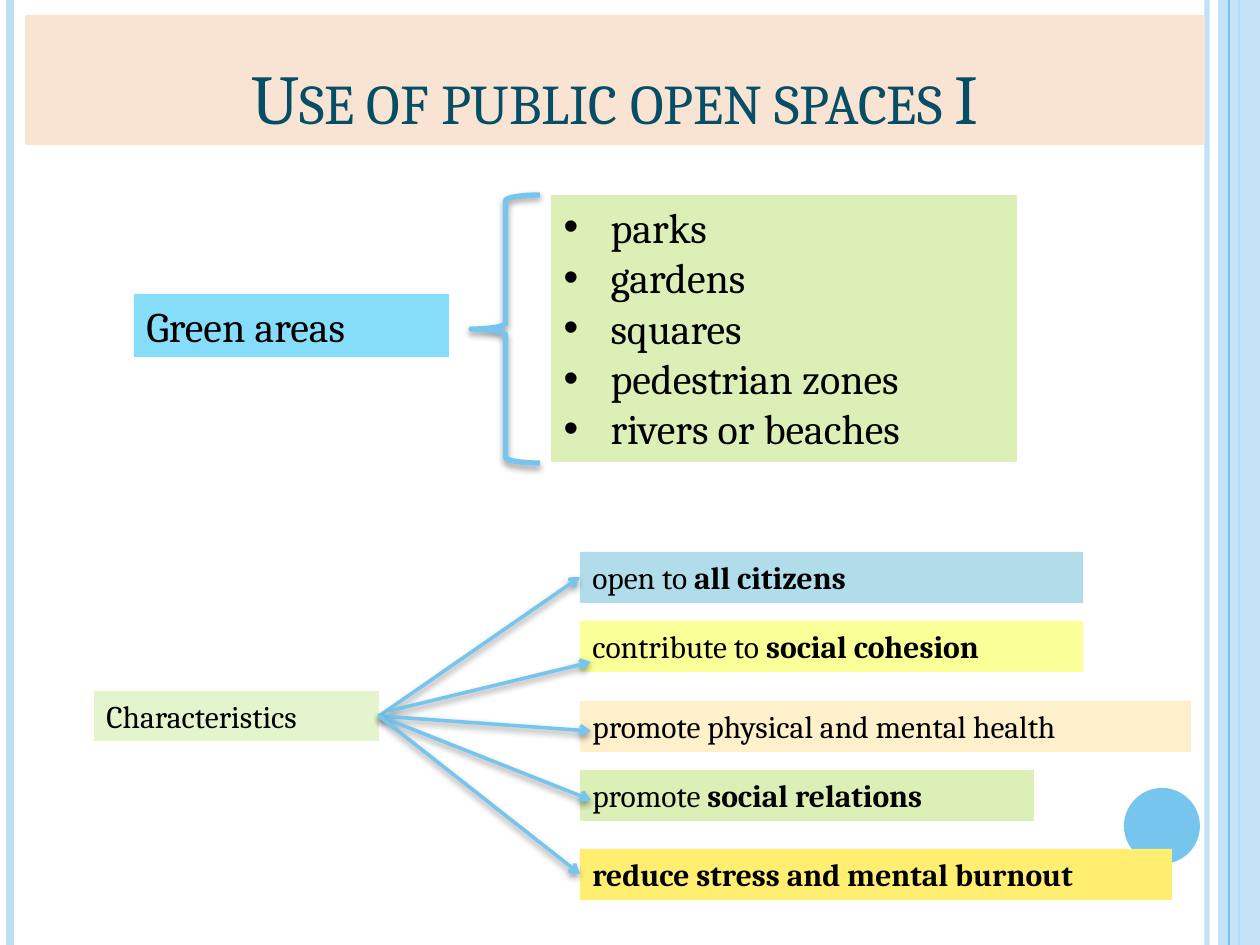
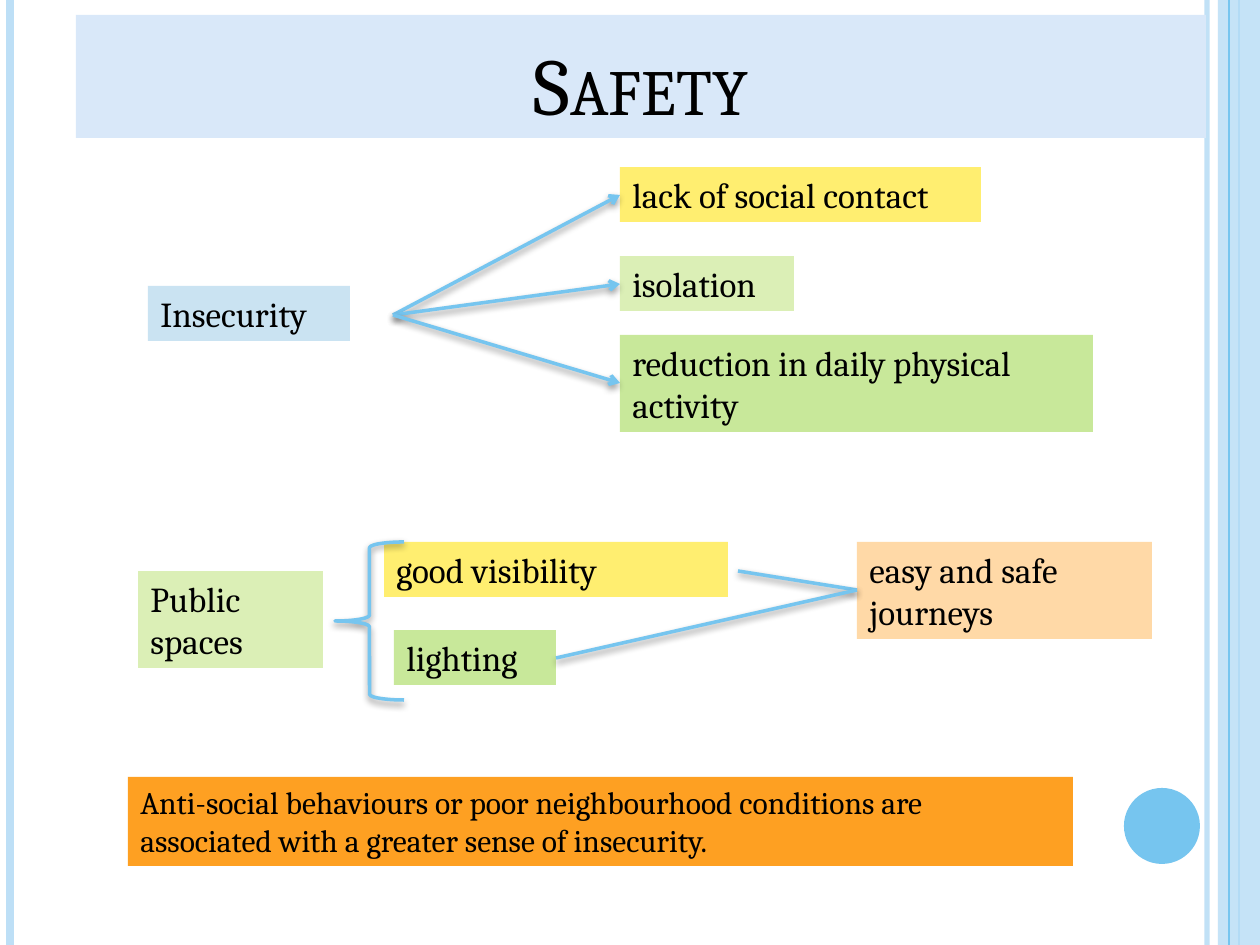
from dataclasses import dataclass

from lxml.etree import SubElement
from pptx import Presentation
from pptx.dml.color import RGBColor
from pptx.enum.shapes import MSO_CONNECTOR, MSO_SHAPE
from pptx.enum.text import MSO_ANCHOR, MSO_AUTO_SIZE, PP_ALIGN
from pptx.oxml.ns import qn
from pptx.util import Emu, Pt

PX_PER_INCH = 126
WIDTH, HEIGHT = 1260, 945
FONT = "Cambria"
BLACK, SKY, PALE_SKY = "000000", "76C5EF", "BDDFF6"
LIME, GREEN, YELLOW = "DBEFB6", "C8E89A", "FFEE70"


@dataclass
class Box:
    text: str
    x: int
    y: int
    w: int
    h: int
    fill: str
    size: int = 20


@dataclass
class Line:
    x1: int
    y1: int
    x2: int
    y2: int
    width: float = 2
    color: str = SKY


def px(n: float) -> Emu:
    return Emu(round(n * 914400 / PX_PER_INCH))


def rgb(color: str) -> RGBColor:
    return RGBColor.from_string(color)


def place(s, x: int, y: int, w: int, h: int) -> None:
    s.left, s.top, s.width, s.height = px(x), px(y), px(w), px(h)


def paint(s, color: str) -> None:
    s.fill.solid()
    s.fill.fore_color.rgb = rgb(color)


def write(tf, text: str, *, size: int, color: str = BLACK, align=PP_ALIGN.LEFT,
          anchor=MSO_ANCHOR.TOP, small_caps: bool = False, indent: int = 0) -> None:
    """Fill a frame: one paragraph per line, with bold between ** marks."""
    tf.word_wrap = True
    tf.auto_size = MSO_AUTO_SIZE.NONE
    tf.vertical_anchor = anchor
    for i, row in enumerate(text.split("\n")):
        p = tf.add_paragraph() if i else tf.paragraphs[0]
        p.alignment = align
        p.space_before = Pt(0)
        if indent:
            pPr = p._p.get_or_add_pPr()
            pPr.set("marL", str(px(indent)))
            pPr.set("indent", str(-px(indent)))
        for j, part in enumerate(row.split("**")):
            if not part:
                continue
            r = p.add_run()
            r.text = part
            r.font.name, r.font.size = FONT, Pt(size)
            r.font.bold = j % 2 == 1
            r.font.color.rgb = rgb(color)
            if small_caps:
                r.font._element.set("cap", "small")


def add_shadow(s) -> None:
    effects = SubElement(s.element.spPr, qn("a:effectLst"))
    shadow = SubElement(effects, qn("a:outerShdw"), blurRad=str(Pt(4)), dist=str(Pt(2)),
                        dir="5400000", rotWithShape="0")
    color = SubElement(shadow, qn("a:srgbClr"), val=BLACK)
    SubElement(color, qn("a:alpha"), val="40000")


def set_opacity(s, percent: int) -> None:
    color = s.element.spPr.find(".//" + qn("a:srgbClr"))
    SubElement(color, qn("a:alpha"), val=str(percent * 1000))


def add_line(slide, line: Line, *, shadow: bool = True, arrow: bool = False):
    s = slide.shapes.add_connector(MSO_CONNECTOR.STRAIGHT, px(line.x1), px(line.y1),
                                   px(line.x2), px(line.y2))
    s.line.color.rgb = rgb(line.color)
    s.line.width = Pt(line.width)
    if arrow:
        SubElement(s.line._get_or_add_ln(), qn("a:tailEnd"), type="arrow")
    if shadow:
        add_shadow(s)
    else:
        SubElement(s.element.spPr, qn("a:effectLst"))
    return s


def add_plain_shape(slide, kind: MSO_SHAPE, x: int, y: int, w: int, h: int, color: str):
    s = slide.shapes.add_shape(kind, px(x), px(y), px(w), px(h))
    s.shadow.inherit = False
    paint(s, color)
    s.line.fill.background()
    return s


def add_box(slide, box: Box) -> None:
    s = slide.shapes.add_textbox(px(box.x), px(box.y), px(box.w), px(box.h))
    paint(s, box.fill)
    write(s.text_frame, box.text, size=box.size)


def add_brace(slide, x: int, y: int, w: int, h: int, width: float) -> None:
    s = slide.shapes.add_shape(MSO_SHAPE.LEFT_BRACE, px(x), px(y), px(w), px(h))
    s.fill.background()
    s.line.color.rgb = rgb(SKY)
    s.line.width = Pt(width)
    add_shadow(s)


def set_title(slide, band: Box, color: str) -> None:
    s = slide.shapes.title
    place(s, band.x, band.y, band.w, band.h)
    paint(s, band.fill)
    write(s.text_frame, band.text, size=band.size, color=color, align=PP_ALIGN.CENTER,
          anchor=MSO_ANCHOR.BOTTOM, small_caps=True)


def decorate_master(prs, slide) -> None:
    """Draw the edge bands and the dot on a slide, then move them to the master."""
    def edge(x: int, width: float, color: str):
        return add_line(slide, Line(x, 0, x, HEIGHT, width, color), shadow=False)

    right = edge(1207, 3, PALE_SKY)
    set_opacity(right, 93)
    left = edge(10, 4.5, PALE_SKY)
    outer = edge(1239, 1.5, SKY)
    band = add_plain_shape(slide, MSO_SHAPE.RECTANGLE, 1218, 0, 42, HEIGHT, PALE_SKY)
    set_opacity(band, 87)
    inner = edge(1229, 0.75, SKY)
    dot = add_plain_shape(slide, MSO_SHAPE.OVAL, 1124, 788, 76, 76, SKY)
    for i, s in enumerate((right, left, outer, band, inner, dot), 100):
        s.element.xpath(".//p:cNvPr")[0].set("id", str(i))
        prs.slide_master.shapes.element.append(s.element)


def build_open_spaces(slide) -> None:
    set_title(slide, Box("Use of public open spaces I", 25, 15, 1180, 130, "F9E3D2", 40),
              "054E65")

    add_box(slide, Box("Green areas", 134, 294, 315, 63, "86DDF9", 24))
    places = slide.placeholders[1]
    place(places, 551, 195, 466, 267)
    paint(places, LIME)
    write(places.text_frame, "parks\ngardens\nsquares\npedestrian zones\nrivers or beaches",
          size=24, indent=47)
    add_brace(slide, 471, 195, 69, 268, 3)

    add_box(slide, Box("Characteristics", 94, 691, 285, 50, "E4F4CD", 18))
    for text, y, w, fill in (
        ("open to **all citizens**", 552, 503, "B1DDEB"),
        ("contribute to **social cohesion**", 621, 503, "FBFF98"),
        ("promote physical and mental health", 701, 611, "FFF0CC"),
        ("promote **social relations**", 770, 454, LIME),
        ("**reduce stress and mental burnout**", 849, 592, YELLOW),
    ):
        add_box(slide, Box(text, 580, y, w, 51, fill, 18))
    for line in (
        Line(379, 716, 580, 577),
        Line(389, 711, 591, 662),
        Line(379, 716, 591, 731),
        Line(379, 716, 591, 800),
        Line(379, 716, 580, 874),
    ):
        add_line(slide, line, arrow=True)


def build_safety(slide) -> None:
    set_title(slide, Box("Safety", 76, 15, 1130, 123, "D9E8F9", 46), BLACK)
    for box in (
        Box("Insecurity", 148, 286, 202, 55, "CAE3F2"),
        Box("lack of social contact", 620, 167, 361, 55, YELLOW),
        Box("reduction in daily physical activity", 620, 335, 473, 97, GREEN),
        Box("isolation", 620, 256, 174, 55, LIME),
        Box("Public\nspaces", 138, 571, 185, 97, LIME),
        Box("good visibility", 384, 542, 344, 55, YELLOW),
        Box("lighting", 394, 630, 162, 55, GREEN),
        Box("easy and safe journeys", 857, 542, 295, 97, "FFD9A7"),
        Box("Anti-social behaviours or poor neighbourhood conditions are associated "
            "with a greater sense of insecurity.", 128, 777, 945, 89, "FEA022", 18),
    ):
        add_box(slide, box)
    for y in (195, 284, 383):
        add_line(slide, Line(393, 315, 620, y), arrow=True)
    add_brace(slide, 335, 542, 69, 158, 2)
    for x, y in ((738, 571), (556, 658)):
        add_line(slide, Line(x, y, 857, 590))


def main() -> None:
    prs = Presentation()
    prs.slide_width, prs.slide_height = px(WIDTH), px(HEIGHT)
    title_and_body, title_only = prs.slide_layouts[1], prs.slide_layouts[5]
    open_spaces = prs.slides.add_slide(title_and_body)
    decorate_master(prs, open_spaces)
    build_open_spaces(open_spaces)
    build_safety(prs.slides.add_slide(title_only))
    prs.save("out.pptx")


if __name__ == "__main__":
    main()
